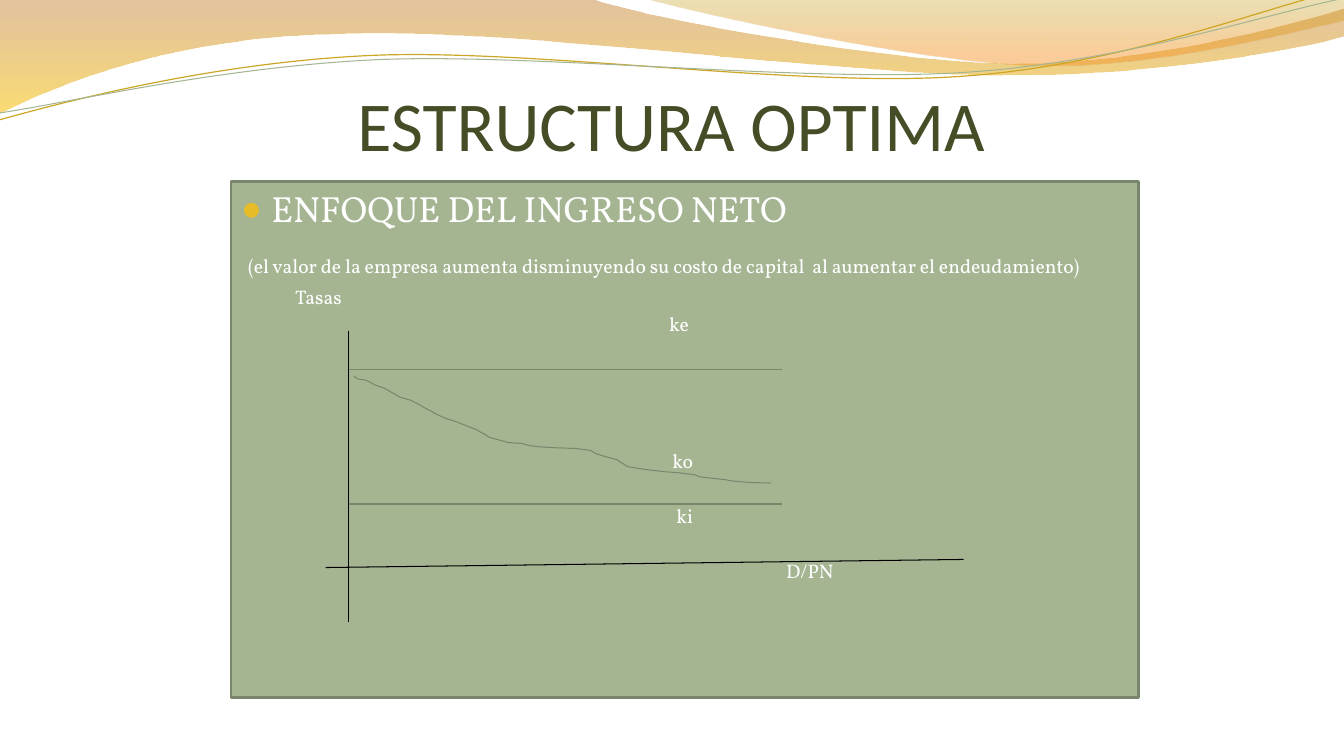
from lxml import etree
from pptx import Presentation
from pptx.dml.color import RGBColor
from pptx.enum.shapes import MSO_CONNECTOR as Connector
from pptx.enum.text import MSO_ANCHOR as Anchor, MSO_AUTO_SIZE as AutoSize, PP_ALIGN as Align
from pptx.oxml.ns import qn
from pptx.util import Pt

COLORS = {
    "title": "444D26", "panel": "A5B592", "edge": "7A866C", "text": "FFFFFF",
    "bullet": "E7BC29", "axis": "000000", "gold": "CCA624",
}

# Waves: a start point, then line ends (2 numbers) or cubic curves (6 numbers)
FILLED_WAVES = [
    ([(0, 0), (422.6, -0.7), (456.5, 12.2, 637.2, 45.4, 727.9, 45.4),
      (819.4, 45.4, 920.2, 18.7, 960, 6.5), (961.2, 26),
      (944, 31.7, 835.2, 54.7, 715.7, 54), (597, 54, 366.5, 20.2, 247, 24.5),
      (123.8, 26, 44, 59.8, -0.7, 81.4)],
     [(0, "C07A28", 45), (100, "F7BF00", 55)]),
    ([(460, -0.7), (489, 8, 654.5, 44.6, 738, 46.8),
      (821.5, 49.7, 923, 23, 960, 15), (960, 0)],
     [(0, "C09709", 30), (80, "F59320", 45)]),
]
WAVE_LINES = [
    ([(-0.7, 85.7), (46, 72.7, 152, 44.6, 265.7, 39.6),
      (379.4, 34.6, 568.8, 62.6, 684, 54.7), (799.2, 47.5, 901.4, 5.8, 958.3, -7.2)],
     "gold", 0.85),
    ([(0, 80.6), (45.4, 74.2, 157, 47.5, 272.2, 42.5),
      (386.6, 38.2, 573.1, 59, 687.6, 51.8), (802.8, 44.6, 903.6, 10, 960.5, -1.4)],
     "panel", 0.75),
]
KO_CURVE = [
    (87.7, 139), (90.6, 141.1), (95.6, 141.8), (99.2, 143.3), (102.8, 145.4),
    (109.3, 147.6), (120.8, 154.1), (128, 156.2), (135.2, 159.8), (138.8, 162),
    (143.2, 164.2), (146.8, 166.3), (153.2, 169.2), (160.4, 171.4), (171.2, 175.7),
    (174.8, 177.1), (181.3, 180.7), (184.9, 182.9), (197.9, 186.5), (208, 187.2),
    (215, 189.8, 225, 190, 246.8, 190.8), (256.9, 192.2), (260.5, 194.4),
    (267.7, 196.6), (275.6, 198.7), (280, 201.6), (283.6, 203.8), (297.2, 205.9),
    (310.2, 207.4), (319.6, 208.1), (331.1, 209.5), (334.7, 211), (353.4, 213.1),
    (357, 213.8), (369.9, 215.2, 374.3, 215.3, 385.8, 215.3),
]
# Panel text after the heading: words, left margin, space before
NOTES = [
    ("(el valor de la empresa aumenta disminuyendo su costo de capital  al aumentar "
     "el endeudamiento)", 5, 14.5),
    ("Tasas", 38.6, 2.5), ("ke", 305.8, 0), ("ko", 308, 78.4),
    ("ki", 311, 19.8), ("D/PN", 389.3, 19.8),
]


def rgb(name):
    return RGBColor.from_string(COLORS[name])


def add_child(parent, tag, **attributes):
    return etree.SubElement(parent, qn(tag), attributes)


def write(para, text, *, size, color, font="Vollkorn", align=Align.LEFT,
          margin=0, indent=0, before=0, line=None, bullet=None):
    span = para.add_run()
    span.text = text
    span.font.name, span.font.size = font, Pt(size)
    span.font.color.rgb = rgb(color)
    para.alignment, para.space_before = align, Pt(before)
    if line:
        para.line_spacing = Pt(line)
    props = para._p.get_or_add_pPr()
    props.set("marL", str(Pt(margin)))
    props.set("indent", str(Pt(indent)))
    if bullet:
        add_child(add_child(props, "a:buClr"), "a:srgbClr", val=COLORS["bullet"])
        add_child(props, "a:buSzPct", val="95000")
        add_child(props, "a:buChar", char=bullet)
    else:
        add_child(props, "a:buNone")


def place(shape, box):
    shape.left, shape.top, shape.width, shape.height = map(Pt, box)


def add_outline(page, box, steps, close=False):
    """Draw line steps, then bend those that carry control points."""
    def spot(point):
        return Pt(box[0] + point[0]), Pt(box[1] + point[1])

    builder = page.shapes.build_freeform(*spot(steps[0]))
    builder.add_line_segments([spot(step[-2:]) for step in steps[1:]], close=close)
    shape = builder.convert_to_shape()
    shape.shadow.inherit = False
    segments = list(shape._element.iter(qn("a:lnTo")))
    for segment, step in zip(segments, steps[1:]):
        if len(step) == 6:
            segment.tag = qn("a:cubicBezTo")
            for number, control in enumerate((step[:2], step[2:4])):
                x, y = spot(control)
                handle = etree.Element(qn("a:pt"), x=str(x - shape.left), y=str(y - shape.top))
                segment.insert(number, handle)
    return shape


def add_curve(page, box, steps, color, width):
    shape = add_outline(page, box, steps)
    shape.fill.background()
    shape.line.color.rgb, shape.line.width = rgb(color), Pt(width)
    return shape


def add_straight(page, box, start, end, color):
    ends = [Pt(value + box[i % 2]) for i, value in enumerate(start + end)]
    line = page.shapes.add_connector(Connector.STRAIGHT, *ends)
    line.line.color.rgb, line.line.width = rgb(color), Pt(0.75)
    add_child(line._element.spPr, "a:effectLst")


def fill_gradient(shape, stops):
    shape.fill.gradient()
    gradient = shape._element.spPr.find(qn("a:gradFill"))
    for child in list(gradient):
        gradient.remove(child)
    stop_list = add_child(gradient, "a:gsLst")
    for position, color, alpha in stops:
        stop = add_child(stop_list, "a:gs", pos=str(position * 1000))
        tint = add_child(stop, "a:srgbClr", val=color)
        add_child(tint, "a:alpha", val=str(alpha * 1000))
    add_child(gradient, "a:lin", ang="5400000", scaled="0")


def draw_waves(page, box):
    """Draw the decoration and hand it to the layout, behind the content."""
    waves = []
    for steps, stops in FILLED_WAVES:
        wave = add_outline(page, box, steps, close=True)
        fill_gradient(wave, stops)
        wave.line.fill.background()
        waves.append(wave)
    for steps, color, width in WAVE_LINES:
        waves.append(add_curve(page, box, steps, color, width))
    for number, wave in enumerate(waves, start=101):
        wave._element.nvSpPr.cNvPr.set("id", str(number))
        page.slide_layout.shapes.element.append(wave._element)


def fill_title(page, box):
    title = page.shapes.title
    place(title, box)
    frame = title.text_frame
    frame.auto_size, frame.vertical_anchor = AutoSize.NONE, Anchor.BOTTOM
    frame.margin_left = frame.margin_right = frame.margin_bottom = 0
    write(frame.paragraphs[0], "ESTRUCTURA OPTIMA", size=50, color="title",
          font="Calibri", align=Align.CENTER)


def fill_panel(page, box):
    panel = page.placeholders[1]
    place(panel, box)
    panel.fill.solid()
    panel.fill.fore_color.rgb = rgb("panel")
    panel.line.color.rgb, panel.line.width = rgb("edge"), Pt(2)
    frame = panel.text_frame
    frame.auto_size, frame.vertical_anchor = AutoSize.NONE, Anchor.TOP
    write(frame.paragraphs[0], "ENFOQUE DEL INGRESO NETO", size=26, color="text",
          margin=21.6, indent=-21.6, line=31, bullet="●")
    for text, margin, before in NOTES:
        write(frame.add_paragraph(), text, size=14, color="text",
              margin=margin, before=before, line=19.5)


def draw_graph(page, box):
    axis_x, rate_end = 84.1, 393.7
    # Axes
    add_straight(page, box, (axis_x, 106.6), (axis_x, 314.6), "axis")
    add_straight(page, box, (67.6, 275.8), (523.3, 270), "axis")
    # Constant rates ke and ki
    for height in (134.6, 230.4):
        add_straight(page, box, (axis_x, height), (rate_end, height), "edge")
    # Falling rate ko
    add_curve(page, box, KO_CURVE, "edge", 0.75)


def main():
    deck = Presentation()
    deck.slide_width, deck.slide_height = Pt(960), Pt(540)
    page = deck.slides.add_slide(deck.slide_layouts[1])
    panel_box = (165, 129.6, 648, 368.6)
    draw_waves(page, (0, 0, 960, 86))
    fill_title(page, (155.6, 39.6, 648, 78.5))
    fill_panel(page, panel_box)
    draw_graph(page, panel_box)
    deck.save("out.pptx")


if __name__ == "__main__":
    main()
